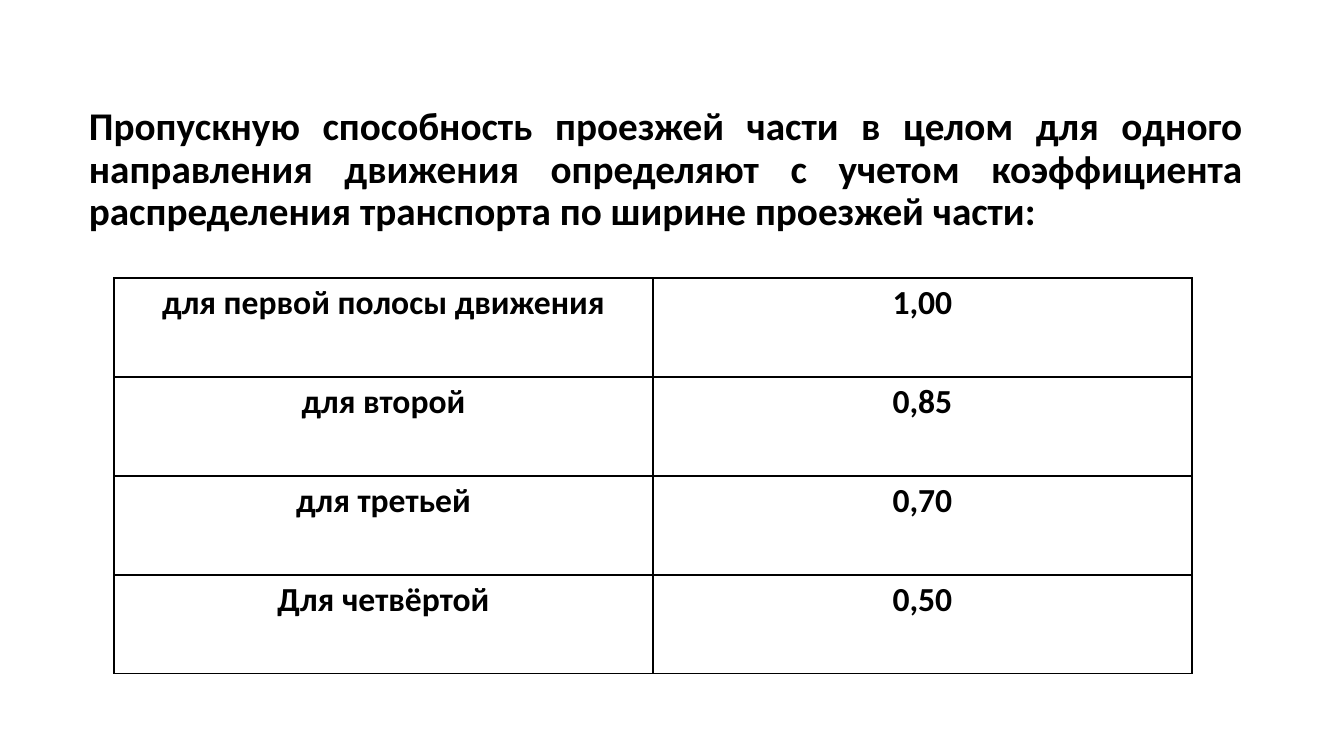
import pptx
import pptx.dml.color
import pptx.enum.text
import pptx.oxml
import pptx.oxml.ns
import pptx.util

SCALE = 914400 / 100.8
ALIGN = pptx.enum.text.PP_ALIGN
INK = "000000"
LEAD = ("Пропускную способность проезжей части в целом для одного направления "
        "движения определяют с учетом коэффициента распределения транспорта "
        "по ширине проезжей части:")
LANES = [
    ("для первой полосы движения", "1,00"),
    ("для второй", "0,85"),
    ("для третьей", "0,70"),
    ("Для четвёртой", "0,50"),
]


def px(count):
    return pptx.util.Emu(round(count * SCALE))


def paint(target, color):
    target.rgb = pptx.dml.color.RGBColor.from_string(color)


def write(frame, text, size=24, align=ALIGN.CENTER, space=1.0, color=INK):
    frame.word_wrap = True
    para = frame.paragraphs[0]
    para.alignment = align
    para.line_spacing = space
    run = para.add_run()
    run.text = text
    run.font.name = "Calibri"
    run.font.size = pptx.util.Pt(size)
    run.font.bold = True
    paint(run.font.color, color)


def edge(cell, color=INK, width=1):
    """Draw a solid line on all four sides of a cell."""
    props = cell._tc.get_or_add_tcPr()
    for place, side in enumerate(("lnL", "lnR", "lnT", "lnB")):
        line = pptx.oxml.parse_xml(
            f'<a:{side} {pptx.oxml.ns.nsdecls("a")} w="{pptx.util.Pt(width)}">'
            f'<a:solidFill><a:srgbClr val="{color}"/></a:solidFill></a:{side}>')
        props.insert(place, line)


def add_text(slide, left, top, width, height, text, **style):
    box = slide.shapes.add_textbox(px(left), px(top), px(width), px(height))
    write(box.text_frame, text, **style)


def add_grid(slide, left, top, wide, high, data):
    """Add a table whose columns are wide and whose rows are high."""
    rows, cols = len(data), len(data[0])
    grid = slide.shapes.add_table(rows, cols, px(left), px(top),
                                  px(wide * cols), px(high * rows)).table
    grid.first_row = grid.horz_banding = False
    for row, texts in enumerate(data):
        for col, text in enumerate(texts):
            cell = grid.cell(row, col)
            cell.fill.background()
            edge(cell)
            write(cell.text_frame, text)


def main():
    deck = pptx.Presentation()
    deck.slide_width, deck.slide_height = px(1344), px(756)
    slide = deck.slides.add_slide(deck.slide_layouts[6])
    add_text(slide, 79, 102, 1173, 140, LEAD,
             size=28, align=ALIGN.JUSTIFY, space=0.9)
    add_grid(slide, 114, 278, 539, 99, LANES)
    deck.save("out.pptx")


if __name__ == "__main__":
    main()
